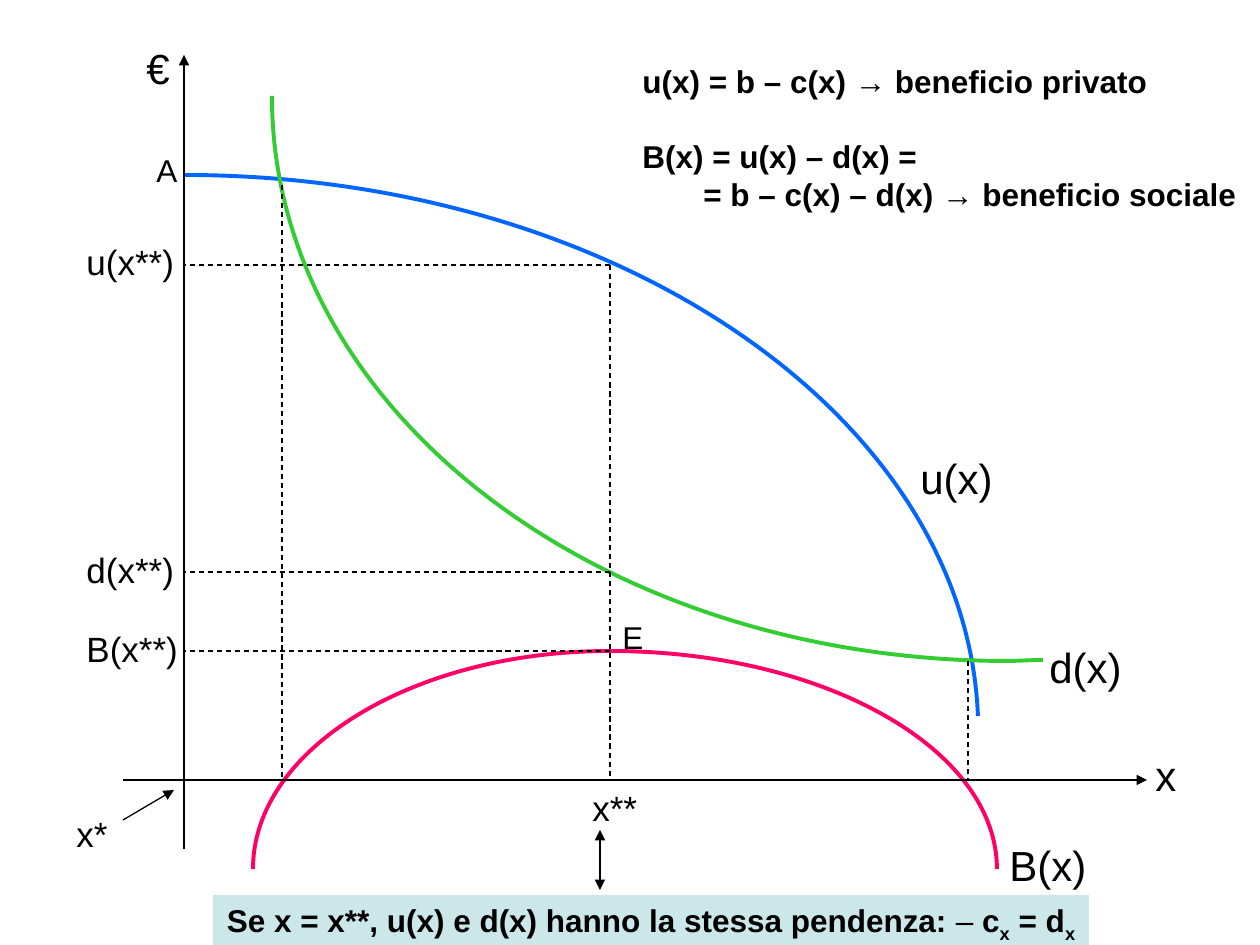
from typing import NamedTuple

from lxml.etree import SubElement
from pptx import Presentation
from pptx.dml.color import RGBColor
from pptx.enum.dml import MSO_LINE
from pptx.enum.shapes import MSO_CONNECTOR, MSO_SHAPE
from pptx.enum.text import MSO_ANCHOR, MSO_AUTO_SIZE, PP_ALIGN
from pptx.oxml.ns import qn
from pptx.util import Emu, Pt

EMU_PER_PX = 914400 / 126
COLORS = {
    "ink": "000000",
    "private": "0066FF",
    "damage": "33CC33",
    "social": "FF0066",
    "banner": "BBE0E3",
}
FONT = "Arial"
ORIGIN_X, ORIGIN_Y = 184, 780
OPTIMUM_X = 610
PRIVATE_Y, DAMAGE_Y, SOCIAL_Y = 265, 572, 651


class Line(NamedTuple):
    start: tuple[int, int]
    end: tuple[int, int]
    dashed: bool = False
    arrows: tuple[str, ...] = ()


class Curve(NamedTuple):
    """A chain of cubic Béziers: a start, then two controls and an end per piece."""
    points: list[tuple[int, int]]
    color: str


class Label(NamedTuple):
    text: str
    left: int
    top: int
    width: int
    height: int
    size: int


class Piece(NamedTuple):
    text: str
    bold: bool = True
    subscript: bool = False


LINES = [
    Line((ORIGIN_X, 849), (ORIGIN_X, 55), arrows=("tailEnd",)),
    Line((123, ORIGIN_Y), (1147, ORIGIN_Y), arrows=("tailEnd",)),
    Line((123, 820), (174, 790), arrows=("tailEnd",)),
    Line((600, 830), (600, 890), arrows=("headEnd", "tailEnd")),
    *[Line((x, top), (x, ORIGIN_Y), dashed=True)
      for x, top in [(968, 661), (282, 185), (OPTIMUM_X, PRIVATE_Y)]],
    *[Line((OPTIMUM_X, y), (ORIGIN_X, y), dashed=True)
      for y in (PRIVATE_Y, DAMAGE_Y, SOCIAL_Y)],
]
PEAK = (OPTIMUM_X, SOCIAL_Y)
CURVES = [
    Curve([(ORIGIN_X, 175), (614, 175), (966, 415), (978, 716)], "private"),
    Curve([(1043, 660), (1032, 660), (1019, 661), (1007, 661),
           (601, 661), (272, 411), (272, 96)], "damage"),
    Curve([PEAK, (413, 651), (253, 749), (253, 869)], "social"),
    Curve([PEAK, (824, 651), (997, 749), (997, 869)], "social"),
]
LABELS = [
    Label("d(x)", 1037, 635, 98, 63, 24),
    Label("u(x)", 908, 446, 98, 63, 24),
    Label("B(x)", 997, 833, 102, 63, 24),
    Label("x", 1143, 743, 47, 63, 24),
    Label("€", 134, 36, 49, 63, 24),
    Label("u(x**)", 74, 234, 117, 54, 20),
    Label("d(x**)", 74, 542, 117, 54, 20),
    Label("B(x**)", 74, 621, 120, 54, 20),
    Label("x**", 580, 780, 74, 54, 20),
    Label("x*", 64, 806, 60, 54, 20),
    Label("A", 144, 145, 47, 50, 18),
    Label("E", 610, 612, 47, 50, 18),
]
EQUATIONS = [
    "u(x) = b – c(x) → beneficio privato",
    "B(x) = u(x) – d(x) =",
    "= b – c(x) – d(x) → beneficio sociale",
]
CONDITION = [
    Piece("Se x = x**, u(x) e d(x) hanno la stessa pendenza: "),
    Piece("– ", bold=False),
    Piece("c"),
    Piece("x", subscript=True),
    Piece(" = d"),
    Piece("x", subscript=True),
]


def px(value: float) -> Emu:
    return Emu(round(value * EMU_PER_PX))


def color(name: str) -> RGBColor:
    return RGBColor.from_string(COLORS[name])


def draw_line(slide, line: Line) -> None:
    connector = slide.shapes.add_connector(
        MSO_CONNECTOR.STRAIGHT, *map(px, line.start + line.end))
    connector.line.color.rgb = color("ink")
    connector.line.width = Pt(0.75)
    if line.dashed:
        connector.line.dash_style = MSO_LINE.DASH
    outline = connector.line._get_or_add_ln()
    for arrow in line.arrows:
        SubElement(outline, qn(f"a:{arrow}"), type="triangle")
    SubElement(connector._element.spPr, qn("a:effectLst"))


def draw_curve(slide, curve: Curve) -> None:
    """Lay out the points as a polyline, then turn each three segments into a Bézier."""
    points = [(px(x), px(y)) for x, y in curve.points]
    builder = slide.shapes.build_freeform(*points[0])
    builder.add_line_segments(points[1:], close=False)
    shape = builder.convert_to_shape()
    shape.shadow.inherit = False
    shape.fill.background()
    shape.line.color.rgb = color(curve.color)
    shape.line.width = Pt(2.25)
    outline = next(shape._element.iter(qn("a:path")))
    outline.set("fill", "none")
    segments = outline.findall(qn("a:lnTo"))
    for first in range(0, len(segments), 3):
        bezier = SubElement(outline, qn("a:cubicBezTo"))
        for segment in segments[first:first + 3]:
            bezier.append(segment[0])
            outline.remove(segment)


def add_run(paragraph, piece: Piece, size: int) -> None:
    run = paragraph.add_run()
    run.text = piece.text
    run.font.name = FONT
    run.font.size = Pt(size)
    run.font.bold = piece.bold
    run.font.color.rgb = color("ink")
    if piece.subscript:
        run.font._element.set("baseline", "-25000")


def fit_frame(shape):
    frame = shape.text_frame
    frame.word_wrap = False
    frame.auto_size = MSO_AUTO_SIZE.SHAPE_TO_FIT_TEXT
    return frame


def draw_label(slide, label: Label) -> None:
    box = slide.shapes.add_textbox(
        px(label.left), px(label.top), px(label.width), px(label.height))
    add_run(fit_frame(box).paragraphs[0], Piece(label.text, bold=False), label.size)


def draw_equations(slide) -> None:
    frame = fit_frame(slide.shapes.add_textbox(px(630), px(56), px(619), px(202)))
    for index, equation in enumerate(EQUATIONS):
        paragraph = frame.add_paragraph() if index else frame.paragraphs[0]
        add_run(paragraph, Piece(equation), 18)
    frame.paragraphs[1].space_before = Pt(21)
    frame.paragraphs[2]._p.get_or_add_pPr().set("marL", str(px(61)))


def draw_condition(slide) -> None:
    banner = slide.shapes.add_shape(
        MSO_SHAPE.RECTANGLE, px(213), px(895), px(876), px(50))
    banner.shadow.inherit = False
    banner.line.fill.background()
    banner.fill.solid()
    banner.fill.fore_color.rgb = color("banner")
    fill_color = next(banner._element.spPr.iter(qn("a:srgbClr")))
    SubElement(fill_color, qn("a:alpha"), val="76000")
    frame = fit_frame(banner)
    frame.vertical_anchor = MSO_ANCHOR.TOP
    paragraph = frame.paragraphs[0]
    paragraph.alignment = PP_ALIGN.CENTER
    for piece in CONDITION:
        add_run(paragraph, piece, 18)


def main() -> None:
    presentation = Presentation()
    presentation.slide_width, presentation.slide_height = px(1260), px(945)
    slide = presentation.slides.add_slide(presentation.slide_layouts[6])
    for curve in CURVES:
        draw_curve(slide, curve)
    for line in LINES:
        draw_line(slide, line)
    for label in LABELS:
        draw_label(slide, label)
    draw_equations(slide)
    draw_condition(slide)
    presentation.save("out.pptx")


if __name__ == "__main__":
    main()
